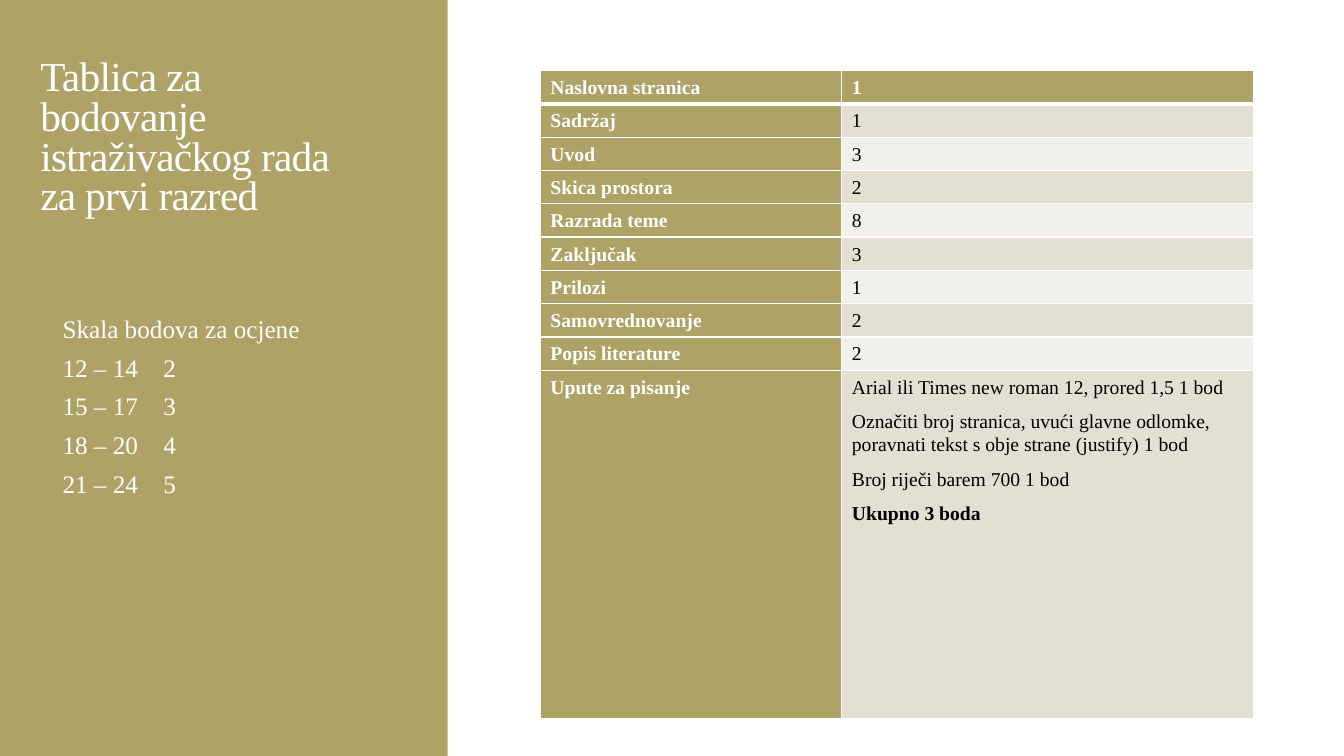
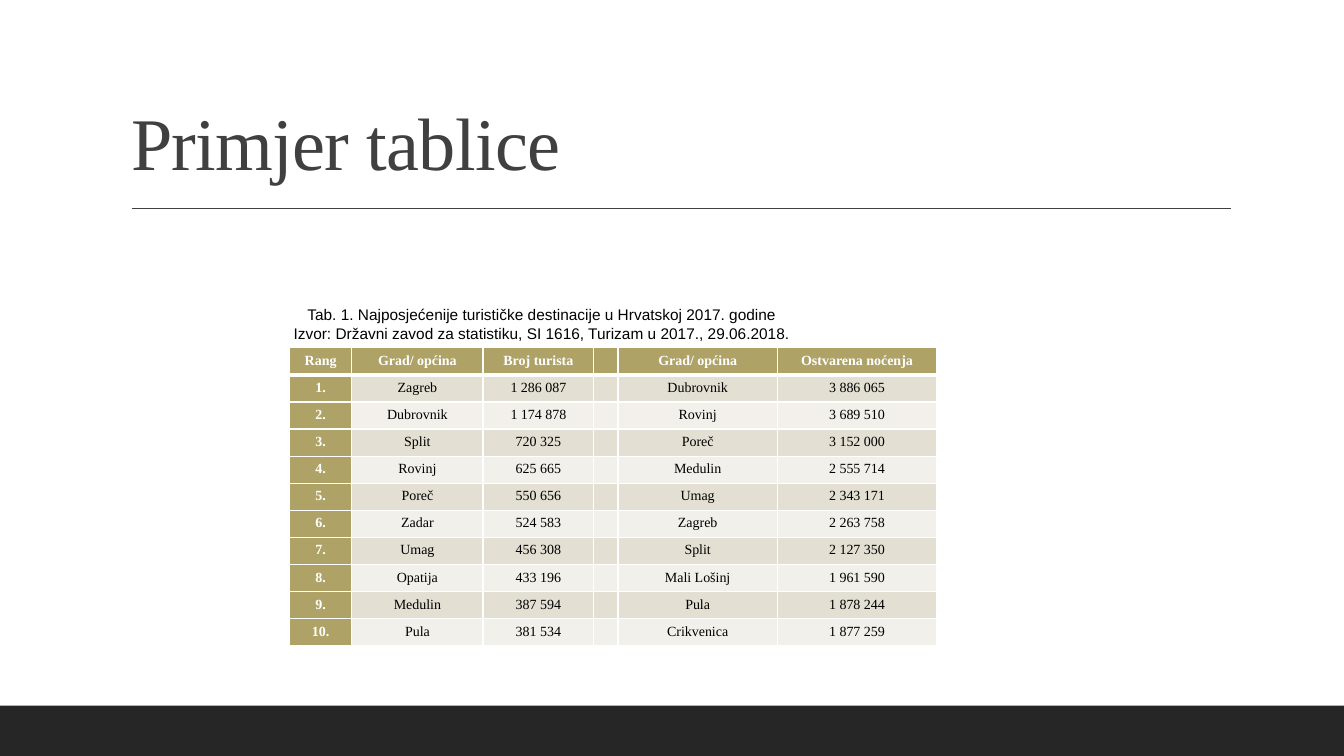
from lxml.etree import SubElement
from pptx import Presentation
from pptx.dml.color import RGBColor
from pptx.enum.shapes import MSO_CONNECTOR, MSO_SHAPE
from pptx.enum.text import MSO_ANCHOR, MSO_AUTO_SIZE, PP_ALIGN
from pptx.oxml.ns import qn
from pptx.util import Inches, Pt

# Shared look
SERIF, SANS = "Times New Roman", "Arial"
OLIVE, BAND_DARK, BAND_LIGHT = "AEA267", "E3DFD3", "F1F0EA"
WHITE, BLACK, CHARCOAL, FOOTER = "FFFFFF", "000000", "404040", "262626"
SLIDE_W, SLIDE_H = 13.33, 7.5

# Content: scoring slide
SCORING_TITLE = "Tablica za bodovanje istraživačkog rada za prvi razred"
GRADE_SCALE = ["Skala bodova za ocjene", "12 – 14 \t2", "15 – 17 \t3",
               "18 – 20 \t4", "21 – 24 \t5"]
WRITING_RULES = [
    "Arial ili Times new roman 12, prored 1,5 1 bod",
    "Označiti broj stranica, uvući glavne odlomke, "
    "poravnati tekst s obje strane (justify) 1 bod",
    "Broj riječi barem 700 1 bod",
    "Ukupno 3 boda",
]
SCORING = [
    ("Naslovna stranica", "1"),
    ("Sadržaj", "1"),
    ("Uvod", "3"),
    ("Skica prostora", "2"),
    ("Razrada teme", "8"),
    ("Zaključak", "3"),
    ("Prilozi", "1"),
    ("Samovrednovanje", "2"),
    ("Popis literature", "2"),
    ("Upute za pisanje", WRITING_RULES),
]

# Content: example slide
EXAMPLE_TITLE = "Primjer tablice"
CAPTION = [
    "Tab. 1. Najposjećenije turističke destinacije u Hrvatskoj 2017. godine",
    "Izvor: Državni zavod za statistiku, SI 1616, Turizam u 2017., 29.06.2018.",
]
DESTINATIONS = [
    ("Rang", "Grad/ općina", "Broj turista", "", "Grad/ općina", "Ostvarena noćenja"),
    ("1.", "Zagreb", "1 286 087", "", "Dubrovnik", "3 886 065"),
    ("2.", "Dubrovnik", "1 174 878", "", "Rovinj", "3 689 510"),
    ("3.", "Split", "720 325", "", "Poreč", "3 152 000"),
    ("4.", "Rovinj", "625 665", "", "Medulin", "2 555 714"),
    ("5.", "Poreč", "550 656", "", "Umag", "2 343 171"),
    ("6.", "Zadar", "524 583", "", "Zagreb", "2 263 758"),
    ("7.", "Umag", "456 308", "", "Split", "2 127 350"),
    ("8.", "Opatija", "433 196", "", "Mali Lošinj", "1 961 590"),
    ("9.", "Medulin", "387 594", "", "Pula", "1 878 244"),
    ("10.", "Pula", "381 534", "", "Crikvenica", "1 877 259"),
]


def rgb(color):
    return RGBColor.from_string(color)


def write(frame, lines, size, color, font=SERIF, bold=False, bold_last=False,
          align=PP_ALIGN.LEFT, anchor=MSO_ANCHOR.TOP, spacing=1.0, after=0,
          tracking=None, tab=None):
    """Fill a text frame, one paragraph per line."""
    frame.word_wrap = True
    frame.vertical_anchor = anchor
    for index, line in enumerate(lines):
        paragraph = frame.paragraphs[0] if index == 0 else frame.add_paragraph()
        properties = paragraph._p.get_or_add_pPr()
        properties.set("marL", "0")
        properties.set("indent", "0")
        paragraph.alignment = align
        paragraph.line_spacing = spacing
        paragraph.space_before, paragraph.space_after = Pt(0), Pt(after)
        SubElement(properties, qn("a:buNone"))
        if tab:
            stops = SubElement(properties, qn("a:tabLst"))
            SubElement(stops, qn("a:tab"), pos=str(Inches(tab)), algn="l")
        if not line:
            paragraph._p.get_or_add_endParaRPr().set("sz", str(size * 100))
            continue
        run = paragraph.add_run()
        run.text = line
        run.font.size, run.font.name = Pt(size), font
        run.font.bold = bold or (bold_last and index == len(lines) - 1)
        run.font.color.rgb = rgb(color)
        if tracking:
            run.font._element.set("spc", str(int(tracking * 100)))


def place(shape, left, top, width, height):
    shape.left, shape.top = Inches(left), Inches(top)
    shape.width, shape.height = Inches(width), Inches(height)


def add_title(slide, text, box, size, color, spacing):
    place(slide.shapes.title, *box)
    frame = slide.shapes.title.text_frame
    frame.auto_size = MSO_AUTO_SIZE.NONE
    write(frame, [text], size, color, anchor=MSO_ANCHOR.BOTTOM,
          spacing=spacing, tracking=-0.5)


def add_block(slide, left, top, width, height, color):
    """Add a plain rectangle behind everything else."""
    block = slide.shapes.add_shape(MSO_SHAPE.RECTANGLE, Inches(left), Inches(top),
                                   Inches(width), Inches(height))
    block.shadow.inherit = False
    block.fill.solid()
    block.fill.fore_color.rgb = rgb(color)
    block.line.fill.background()
    slide.shapes._spTree.insert(2, block._element)
    return block


def add_footer_band(deck, slide):
    """Draw the band once and move it to the slide master."""
    band = add_block(slide, 0, 7, SLIDE_W, 0.5, FOOTER)
    band._element.nvSpPr.cNvPr.set("id", "20")
    deck.slide_master.shapes._spTree.insert(2, band._element)


def add_borders(cell, row):
    thick = {0: "a:lnB", 1: "a:lnT"}.get(row)
    properties = cell._tc.get_or_add_tcPr()
    for side in ("a:lnL", "a:lnR", "a:lnT", "a:lnB"):
        width = Pt(3 if side == thick else 0.96)
        edge = SubElement(properties, qn(side), w=str(width))
        SubElement(SubElement(edge, qn("a:solidFill")), qn("a:srgbClr"), val=WHITE)


def add_grid(slide, rows, left, top, widths, heights, side_margin, **text_format):
    """Add a table with a coloured first row and column and banded rows."""
    frame = slide.shapes.add_table(len(rows), len(widths), Inches(left), Inches(top),
                                   Inches(sum(widths)), Inches(sum(heights)))
    table = frame.table
    for column, width in zip(table.columns, widths):
        column.width = Inches(width)
    for r, (values, height) in enumerate(zip(rows, heights)):
        table.rows[r].height = Inches(height)
        for c, value in enumerate(values):
            cell = table.cell(r, c)
            heading = r == 0 or c == 0
            add_borders(cell, r)
            cell.margin_left = cell.margin_right = Inches(side_margin)
            cell.fill.solid()
            cell.fill.fore_color.rgb = rgb(
                OLIVE if heading else BAND_DARK if r % 2 else BAND_LIGHT)
            lines = value if isinstance(value, list) else [value]
            write(cell.text_frame, lines, bold=heading,
                  color=WHITE if heading else BLACK,
                  bold_last=len(lines) > 1, **text_format)


def build_scoring(deck):
    slide = deck.slides.add_slide(deck.slide_layouts[1])
    add_footer_band(deck, slide)

    # Olive side panel on a white page
    add_block(slide, 0, 0, 4.44, SLIDE_H, OLIVE)
    add_block(slide, 0, 0, SLIDE_W, SLIDE_H, WHITE)
    add_title(slide, SCORING_TITLE, (0.3, 0.57, 3.37, 1.65), 29.5, WHITE, 0.8)

    # Grade scale
    scale = slide.placeholders[1]
    place(scale, 0.62, 3.06, 3.29, 3.49)
    scale.text_frame.auto_size = MSO_AUTO_SIZE.NONE
    scale.text_frame.margin_left = scale.text_frame.margin_right = 0
    write(scale.text_frame, GRADE_SCALE, 18, WHITE, after=6, tab=1)

    # Points table
    heights = [0.33] * (len(SCORING) - 1) + [3.46]
    add_grid(slide, SCORING, 5.36, 0.7, (2.99, 4.08), heights, 0.1,
             size=14, spacing=1.07, after=8)


def build_example(deck):
    slide = deck.slides.add_slide(deck.slide_layouts[5])
    add_title(slide, EXAMPLE_TITLE, (1.2, 0.31, 11, 1.59), 53, CHARCOAL, 0.9)

    # Rule under the title
    rule = slide.shapes.add_connector(MSO_CONNECTOR.STRAIGHT, Inches(1.31),
                                      Inches(2.07), Inches(12.21), Inches(2.07))
    rule.line.color.rgb = rgb(CHARCOAL)
    rule.line.width = Pt(0.75)
    SubElement(rule._element.spPr, qn("a:effectLst"))

    # Destinations table and its caption
    heights = [0.26] * len(DESTINATIONS)
    add_grid(slide, DESTINATIONS, 2.87, 3.45, (0.62, 1.3, 1.1, 0.24, 1.58, 1.58),
             heights, 0.07, size=10, align=PP_ALIGN.CENTER)
    caption = slide.shapes.add_textbox(Inches(2.63), Inches(2.98),
                                       Inches(5.49), Inches(0.47))
    write(caption.text_frame, CAPTION, 11, BLACK, font=SANS,
          align=PP_ALIGN.CENTER, anchor=MSO_ANCHOR.MIDDLE)


def main():
    deck = Presentation()
    deck.slide_width, deck.slide_height = Inches(SLIDE_W), Inches(SLIDE_H)
    build_scoring(deck)
    build_example(deck)
    deck.save("out.pptx")


if __name__ == "__main__":
    main()
